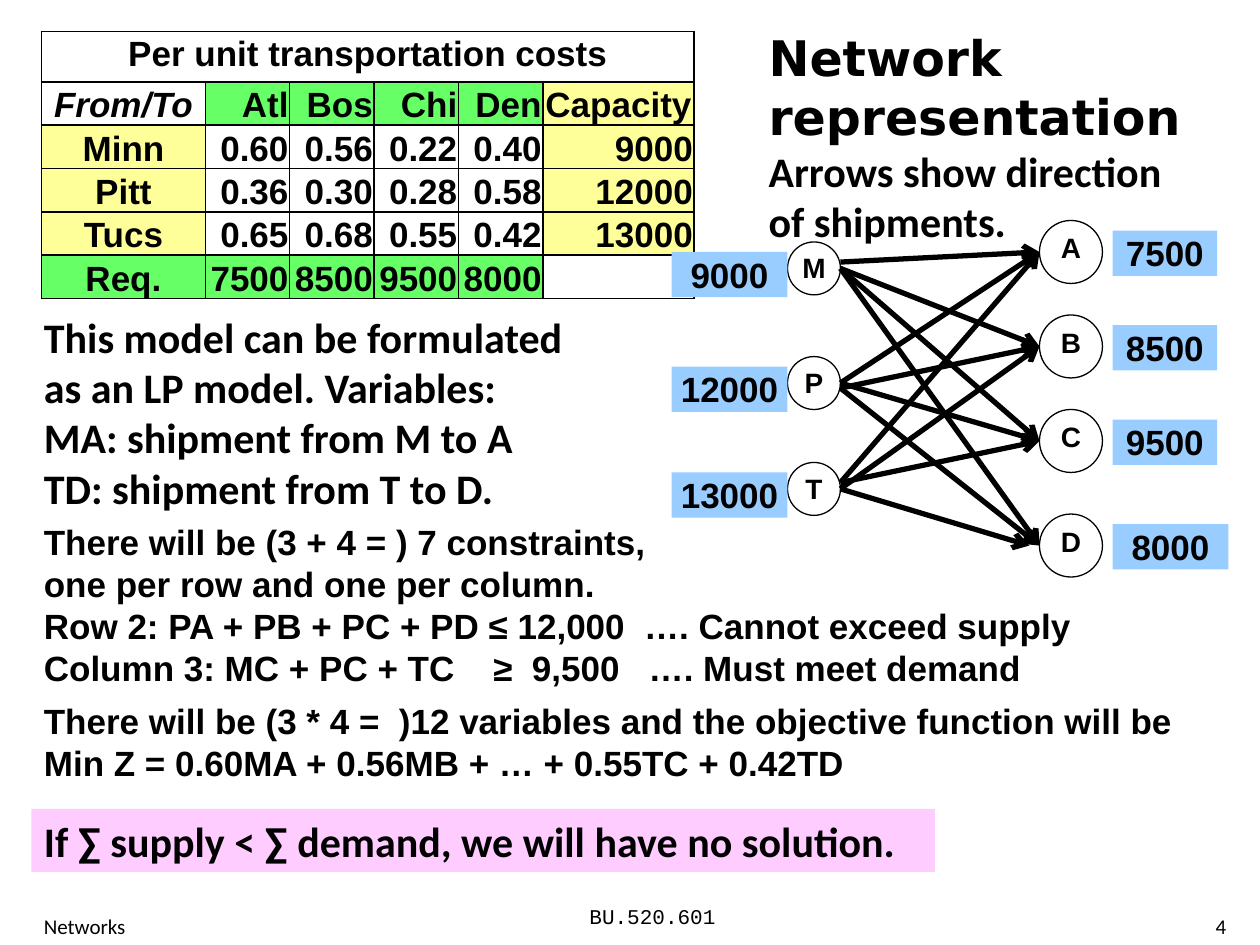
from dataclasses import dataclass

from lxml.etree import SubElement
from pptx import Presentation
from pptx.dml.color import RGBColor
from pptx.enum.shapes import MSO_CONNECTOR, MSO_SHAPE
from pptx.enum.text import MSO_ANCHOR, MSO_AUTO_SIZE, PP_ALIGN
from pptx.oxml.ns import qn
from pptx.util import Inches, Pt


@dataclass(frozen=True)
class Theme:
    ink: str = "000000"
    demand: str = "66FF66"
    supply: str = "FFFF99"
    amount: str = "99CCFF"
    note: str = "FFCCFF"
    sans: str = "Arial"
    body: str = "Calibri"
    heading: str = "DejaVu Sans"
    mono: str = "Courier New"
    heading_size: int = 28
    statement_size: int = 24
    text_size: int = 20
    node_size: int = 16
    footer_size: int = 12


THEME = Theme()


def add_text(paragraph, text, *, font=THEME.sans, size=THEME.text_size, bold=True, italic=False):
    run = paragraph.add_run()
    run.text = text
    run.font.name = font
    run.font.size = Pt(size)
    run.font.bold = bold
    run.font.italic = italic
    run.font.color.rgb = RGBColor.from_string(THEME.ink)


def write_lines(frame, lines, *, align=PP_ALIGN.LEFT, inset=None, **text_format):
    """Put each line in its own paragraph, anchored at the top of the frame."""
    frame.word_wrap = True
    frame.vertical_anchor = MSO_ANCHOR.TOP
    if inset is not None:
        frame.margin_left = frame.margin_right = Inches(inset)
        frame.margin_top = frame.margin_bottom = Inches(inset)
    for index, line in enumerate(lines):
        paragraph = frame.add_paragraph() if index else frame.paragraphs[0]
        paragraph.alignment = align
        add_text(paragraph, line, **text_format)


def add_cell_borders(cell):
    properties = cell._tc.get_or_add_tcPr()
    for side in ("a:lnL", "a:lnR", "a:lnT", "a:lnB"):
        border = SubElement(properties, qn(side), w=str(Pt(1)))
        fill = SubElement(border, qn("a:solidFill"))
        SubElement(fill, qn("a:srgbClr"), val=THEME.ink)


class SlideBuilder:
    def __init__(self, theme, slide):
        self.theme = theme
        self.slide = slide

    def title(self, box, heading, subtitle):
        title = self.slide.shapes.title
        title.left, title.top, title.width, title.height = map(Inches, box)
        frame = title.text_frame
        frame.auto_size = MSO_AUTO_SIZE.NONE
        frame.vertical_anchor = MSO_ANCHOR.TOP
        paragraph = frame.paragraphs[0]
        paragraph.alignment = PP_ALIGN.LEFT
        add_text(paragraph, heading, font=self.theme.heading, size=self.theme.heading_size)
        add_text(paragraph, subtitle, font=self.theme.body, size=self.theme.statement_size)

    def text_box(self, box, lines, **text_format):
        shape = self.slide.shapes.add_textbox(*map(Inches, box))
        write_lines(shape.text_frame, lines, **text_format)

    def shape(self, kind, box, text, *, fill=None, outlined=False, **text_format):
        shape = self.slide.shapes.add_shape(kind, *map(Inches, box))
        shape.shadow.inherit = False
        if fill:
            shape.fill.solid()
            shape.fill.fore_color.rgb = RGBColor.from_string(fill)
        else:
            shape.fill.background()
        if outlined:
            shape.line.color.rgb = RGBColor.from_string(self.theme.ink)
            shape.line.width = Pt(0.75)
        else:
            shape.line.fill.background()
        write_lines(shape.text_frame, [text], **text_format)

    def node(self, left, top, diameter, name):
        self.shape(MSO_SHAPE.OVAL, (left, top, diameter, diameter), name, outlined=True,
                   align=PP_ALIGN.CENTER, inset=0.01, size=self.theme.node_size)

    def amount(self, left, top, width, text):
        self.shape(MSO_SHAPE.RECTANGLE, (left, top, width, 0.36), text,
                   fill=self.theme.amount, align=PP_ALIGN.CENTER, inset=0.01)

    def arrow(self, start, end):
        connector = self.slide.shapes.add_connector(
            MSO_CONNECTOR.STRAIGHT, *map(Inches, (*start, *end)))
        connector.line.color.rgb = RGBColor.from_string(self.theme.ink)
        connector.line.width = Pt(3)
        SubElement(connector.line._get_or_add_ln(), qn("a:tailEnd"), type="arrow")
        SubElement(connector._element.spPr, qn("a:effectLst"))

    def cost_table(self, box, caption, rows, column_widths, row_heights):
        table = self.slide.shapes.add_table(
            len(row_heights), len(column_widths), *map(Inches, box)).table
        table.first_row = table.horz_banding = False
        for column, width in zip(table.columns, column_widths):
            column.width = Inches(width)
        for row, height in zip(table.rows, row_heights):
            row.height = Inches(height)
        last_row, last_column = len(row_heights) - 1, len(column_widths) - 1
        table.cell(0, 0).merge(table.cell(0, last_column))
        grid = [[caption] + [""] * last_column, *rows]
        for row_index, values in enumerate(grid):
            for column_index, value in enumerate(values):
                cell = table.cell(row_index, column_index)
                add_cell_borders(cell)
                self.fill_cell(cell, row_index, column_index, last_row, last_column)
                is_caption = row_index == 0
                inset = 0.03 if is_caption else 0.01
                cell.margin_left = cell.margin_right = cell.margin_top = Inches(inset)
                cell.margin_bottom = Inches(0.03 if is_caption else 0)
                cell.vertical_anchor = MSO_ANCHOR.TOP if is_caption else MSO_ANCHOR.BOTTOM
                centred = column_index == 0 or value == "Capacity"
                paragraph = cell.text_frame.paragraphs[0]
                paragraph.alignment = PP_ALIGN.CENTER if centred else PP_ALIGN.RIGHT
                if value:
                    add_text(paragraph, value, italic=value == "From/To")

    def fill_cell(self, cell, row, column, last_row, last_column):
        """Colour the demand rows green and the supply columns yellow."""
        color = None
        if (row == 1 and 0 < column < last_column) or (row == last_row and column < last_column):
            color = self.theme.demand
        elif (1 < row < last_row and column == 0) or (0 < row < last_row and column == last_column):
            color = self.theme.supply
        if color:
            cell.fill.solid()
            cell.fill.fore_color.rgb = RGBColor.from_string(color)
        else:
            cell.fill.background()


def add_network(builder):
    # name, node top, amount, arrow start heights towards A, B, C and D
    sources = [("M", 1.92, "9000", (2.08, 2.13, 2.13, 2.13)),
               ("P", 2.83, "12000", (3.04, 3.08, 3.04, 3.08)),
               ("T", 3.67, "13000", (3.83, 3.88, 3.83, 3.88))]
    targets = [("A", 1.75, "7500", 0.83), ("B", 2.5, "8500", 0.83),
               ("C", 3.25, "9500", 0.83), ("D", 4.08, "8000", 0.92)]
    for name, top, amount, _ in sources:
        builder.node(6.25, top, 0.42, name)
        builder.amount(5.33, top + 0.08, 0.92, amount)
    for name, top, amount, width in targets:
        builder.node(8.25, top, 0.5, name)
        builder.amount(8.83, top + 0.08, width, amount)
    for source, _, _, starts in sources:
        for start, (target, top, _, _) in zip(starts, targets):
            end_left = 8.17 if source + target == "TD" else 8.25
            builder.arrow((6.67, start), (end_left, top + 0.25))


def main():
    presentation = Presentation()
    presentation.slide_width, presentation.slide_height = Inches(10), Inches(7.5)
    builder = SlideBuilder(THEME, presentation.slides.add_slide(presentation.slide_layouts[5]))
    footer = {"size": THEME.footer_size, "bold": False}
    statement = {"font": THEME.body, "size": THEME.statement_size}

    builder.text_box((4.58, 7.12, 1.25, 0.3), ["BU.520.601"], font=THEME.mono, **footer)
    builder.text_box((0.25, 7.2, 3.17, 0.25), ["Networks"], font=THEME.body, **footer)
    builder.text_box((7.75, 7.2, 2.08, 0.25), ["4"], font=THEME.body,
                     align=PP_ALIGN.RIGHT, **footer)
    builder.cost_table(
        (0.33, 0.25, 5.18, 2.11), "Per unit transportation costs",
        [["From/To", "Atl", "Bos", "Chi", "Den", "Capacity"],
         ["Minn", "0.60", "0.56", "0.22", "0.40", "9000"],
         ["Pitt", "0.36", "0.30", "0.28", "0.58", "12000"],
         ["Tucs", "0.65", "0.68", "0.55", "0.42", "13000"],
         ["Req.", "7500", "8500", "9500", "8000", ""]],
        [1.3] + [0.67] * 4 + [1.2], [0.4] + [0.34] * 5)
    builder.title((6, 0.17, 3.67, 1.85), "Network representation ",
                  "Arrows show direction of shipments.")
    builder.text_box((0.25, 2.42, 4.42, 1.72),
                     ["This model can be formulated as an LP model. Variables:",
                      "MA: shipment from M to A", "TD: shipment from T to D."], **statement)
    add_network(builder)
    builder.text_box((0.25, 4.08, 9.33, 1.45),
                     ["There will be (3 + 4 = ) 7 constraints,", "one per row and one per column.",
                      "Row 2: PA + PB + PC + PD ≤ 12,000  …. Cannot exceed supply",
                      "Column 3: MC + PC + TC    ≥  9,500   …. Must meet demand"])
    builder.text_box((0.25, 5.5, 9.33, 0.77),
                     ["There will be (3 * 4 =  )12 variables and the objective function will be",
                      "Min Z = 0.60MA + 0.56MB + … + 0.55TC + 0.42TD"])
    builder.shape(MSO_SHAPE.RECTANGLE, (0.25, 6.42, 7.17, 0.5),
                  "If ∑ supply < ∑ demand, we will have no solution.", fill=THEME.note, **statement)
    presentation.save("out.pptx")


if __name__ == "__main__":
    main()
